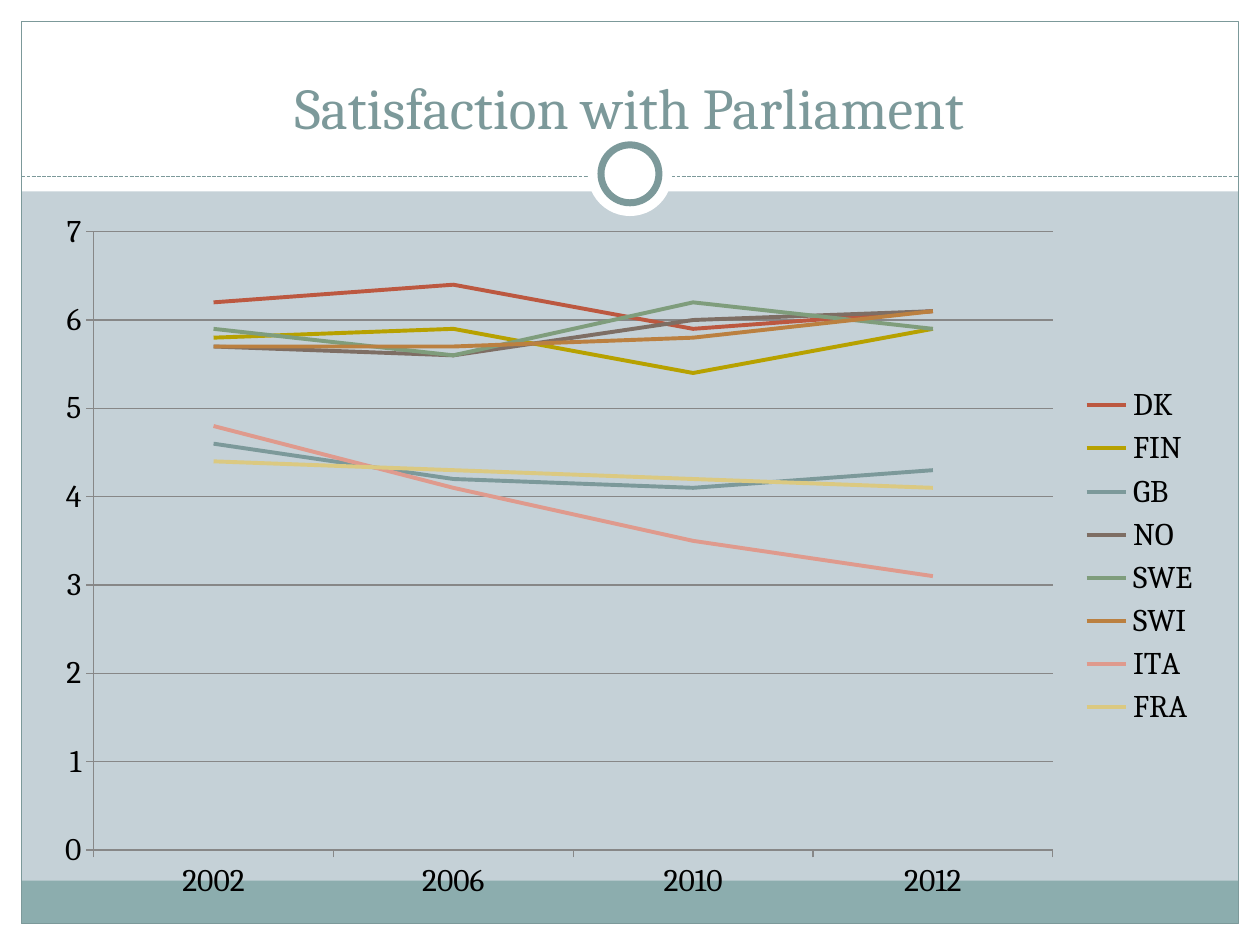
from lxml.etree import SubElement
from pptx import Presentation
from pptx.chart.data import CategoryChartData
from pptx.dml.color import RGBColor
from pptx.enum.chart import XL_CHART_TYPE as ChartType, XL_LEGEND_POSITION as LegendPosition
from pptx.enum.chart import XL_TICK_MARK as TickMark
from pptx.enum.dml import MSO_LINE_DASH_STYLE as Dash
from pptx.enum.shapes import MSO_CONNECTOR as Connector, MSO_SHAPE as Shape
from pptx.enum.text import MSO_ANCHOR as Anchor, MSO_AUTO_SIZE as AutoSize, PP_ALIGN as Align
from pptx.oxml.ns import qn
from pptx.util import Inches, Pt

WIDTH, HEIGHT = 10, 7.5
MARGIN = 0.17
INNER_WIDTH = WIDTH - 2 * MARGIN
HEADER_HEIGHT = 1.52
RULE_Y = 1.4
FOOTER_HEIGHT = 0.34
RING_CENTER = (WIDTH / 2, 1.38)

WHITE = RGBColor(0xFF, 0xFF, 0xFF)
BLACK = RGBColor(0x00, 0x00, 0x00)
MIST = RGBColor(0xC5, 0xD1, 0xD7)
TEAL = RGBColor(0x8C, 0xAD, 0xAE)
DEEP_TEAL = RGBColor(0x7C, 0x99, 0x9A)
GRID_GREY = RGBColor(0x87, 0x87, 0x87)

FONT = "Cambria"
YEARS = ["2002", "2006", "2010", "2012"]
COUNTRIES = [
    ("DK", (6.2, 6.4, 5.9, 6.1), RGBColor(0xBC, 0x58, 0x40)),
    ("FIN", (5.8, 5.9, 5.4, 5.9), RGBColor(0xB7, 0xA1, 0x00)),
    ("GB", (4.6, 4.2, 4.1, 4.3), RGBColor(0x7C, 0x99, 0x9A)),
    ("NO", (5.7, 5.6, 6, 6.1), RGBColor(0x7E, 0x6E, 0x64)),
    ("SWE", (5.9, 5.6, 6.2, 5.9), RGBColor(0x7F, 0x9D, 0x7C)),
    ("SWI", (5.7, 5.7, 5.8, 6.1), RGBColor(0xBB, 0x80, 0x40)),
    ("ITA", (4.8, 4.1, 3.5, 3.1), RGBColor(0xDF, 0x9A, 0x8D)),
    ("FRA", (4.4, 4.3, 4.2, 4.1), RGBColor(0xDB, 0xC9, 0x81)),
]


def apply_format(target, values):
    for attribute, value in values.items():
        setattr(target, attribute, value)


def format_line(line, color, width):
    line.color.rgb = color
    line.width = Pt(width)


def add_panel(slide, left, top, width, height, fill=None, border=None, kind=Shape.RECTANGLE):
    panel = slide.shapes.add_shape(kind, *map(Inches, (left, top, width, height)))
    panel.shadow.inherit = False
    if fill is None:
        panel.fill.background()
    else:
        panel.fill.solid()
        panel.fill.fore_color.rgb = fill
    if border is None:
        panel.line.fill.background()
    else:
        format_line(panel.line, *border)


def add_disc(slide, diameter, border=None):
    left, top = (center - diameter / 2 for center in RING_CENTER)
    add_panel(slide, left, top, diameter, diameter, WHITE, border, Shape.OVAL)


def add_header_rule(slide):
    ends = (MARGIN, RULE_Y, WIDTH - MARGIN, RULE_Y)
    rule = slide.shapes.add_connector(Connector.STRAIGHT, *map(Inches, ends))
    format_line(rule.line, DEEP_TEAL, 0.75)
    rule.line.dash_style = Dash.SQUARE_DOT
    SubElement(rule._element.spPr, qn("a:effectLst"))


def add_frame(slide):
    margins = [
        (0, HEIGHT - MARGIN, WIDTH, MARGIN),
        (0, 0, WIDTH, HEADER_HEIGHT),
        (0, 0, MARGIN, HEIGHT),
        (WIDTH - MARGIN, 0, MARGIN, HEIGHT),
    ]
    for area in margins:
        add_panel(slide, *area, fill=WHITE)
    footer_top = HEIGHT - MARGIN - FOOTER_HEIGHT
    add_panel(slide, MARGIN, footer_top, INNER_WIDTH, FOOTER_HEIGHT, fill=TEAL)
    add_panel(slide, MARGIN, MARGIN, INNER_WIDTH, HEIGHT - 2 * MARGIN, border=(DEEP_TEAL, 0.75))
    add_header_rule(slide)
    add_disc(slide, 0.67)
    add_disc(slide, 0.46, (DEEP_TEAL, 4))


def add_satisfaction_chart(slide):
    data = CategoryChartData()
    data.categories = YEARS
    for country, scores, _ in COUNTRIES:
        data.add_series(country, scores)
    area = map(Inches, (0.33, 1.58, 9.3, 5.67))
    chart = slide.shapes.add_chart(ChartType.LINE, *area, data).chart
    apply_format(chart, {"has_title": False, "has_legend": True})
    apply_format(chart.font, {"size": Pt(18), "name": FONT})
    chart.font.color.rgb = BLACK
    apply_format(chart.legend, {"position": LegendPosition.RIGHT, "include_in_layout": False})
    chart.plots[0].vary_by_categories = False

    for axis in (chart.category_axis, chart.value_axis):
        axis.major_tick_mark = TickMark.OUTSIDE
        format_line(axis.format.line, GRID_GREY, 0.75)
    scale = {"minimum_scale": 0, "maximum_scale": 7, "major_unit": 1, "has_major_gridlines": True}
    apply_format(chart.value_axis, scale)
    format_line(chart.value_axis.major_gridlines.format.line, GRID_GREY, 0.75)

    for series, (_, _, color) in zip(chart.plots[0].series, COUNTRIES):
        series.smooth = False
        format_line(series.format.line, color, 2.25)


def set_title(slide, wording):
    title = slide.shapes.title
    position = {"left": 0.33, "top": MARGIN, "width": 9.33, "height": 1}
    apply_format(title, {side: Inches(length) for side, length in position.items()})
    frame = title.text_frame
    frame.text = wording
    apply_format(frame, {"vertical_anchor": Anchor.BOTTOM, "auto_size": AutoSize.NONE, "word_wrap": True})
    paragraph = frame.paragraphs[0]
    paragraph.alignment = Align.CENTER
    font = paragraph.runs[0].font
    apply_format(font, {"size": Pt(33), "name": FONT})
    font.color.rgb = DEEP_TEAL
    slide.shapes._spTree.append(title._element)


def main():
    deck = Presentation()
    apply_format(deck, {"slide_width": Inches(WIDTH), "slide_height": Inches(HEIGHT)})
    slide = deck.slides.add_slide(deck.slide_layouts.get_by_name("Title Only"))
    slide.background.fill.solid()
    slide.background.fill.fore_color.rgb = MIST
    add_frame(slide)
    add_satisfaction_chart(slide)
    set_title(slide, "Satisfaction with Parliament")
    deck.save("out.pptx")


if __name__ == "__main__":
    main()
